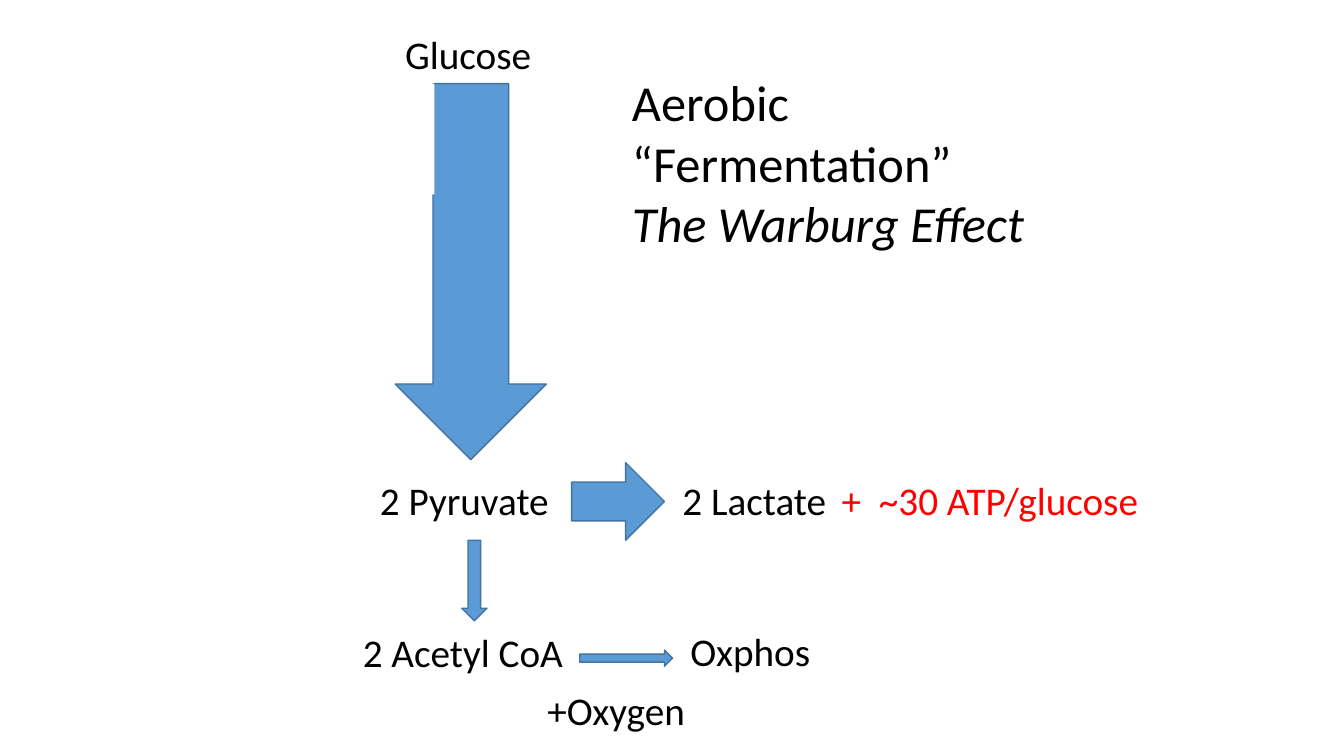
"""Build a slide on aerobic fermentation (the Warburg effect)."""
from pptx import Presentation
from pptx.dml.color import RGBColor
from pptx.enum.shapes import MSO_SHAPE
from pptx.enum.text import MSO_AUTO_SIZE
from pptx.util import Inches, Pt

DOWN, RIGHT, RECT = MSO_SHAPE.DOWN_ARROW, MSO_SHAPE.RIGHT_ARROW, MSO_SHAPE.RECTANGLE
FIT = MSO_AUTO_SIZE.SHAPE_TO_FIT_TEXT
COLORS = {"arrow": "5B9BD5", "outline": "43739E", "text": "000000",
          "energy": "FF0000", "mask": "FFFFFF"}


def rgb(name):
    return RGBColor.from_string(COLORS[name])


prs = Presentation()
prs.slide_width, prs.slide_height = Inches(13.33), Inches(7.5)
s = prs.slides.add_slide(prs.slide_layouts[6])

arrows = [
    (DOWN, 3.92, 0.83, 1.5, 3.73),
    (RIGHT, 5.75, 6.45, 0.92, 0.16),
    (DOWN, 4.58, 5.36, 0.25, 0.8),
    (RIGHT, 5.67, 4.59, 0.92, 0.77),
]
for kind, *box in arrows:
    sp = s.shapes.add_shape(kind, *map(Inches, box))
    sp.shadow.inherit = False
    sp.fill.solid()
    sp.fill.fore_color.rgb = rgb("arrow")
    sp.line.color.rgb = rgb("outline")
    sp.line.width = Pt(1)

labels = [
    ("Glucose", 3.92, 0.25, 2.75, 0.57, 28, "text"),
    ("2 Pyruvate", 3.67, 4.68, 2.75, 0.57, 28, "text"),
    ("2 Lactate", 6.67, 4.68, 2.75, 0.57, 28, "text"),
    ("2 Acetyl CoA", 3.5, 6.18, 2.75, 0.57, 28, "text"),
    ("Oxphos", 6.75, 6.17, 2.75, 0.57, 28, "text"),
    ("Aerobic\n“Fermentation”\nThe Warburg Effect", 6.17, 0.66, 4.33, 1.92, 36, "text"),
    ("+  ~30 ATP/glucose", 8.25, 4.68, 3.71, 0.57, 28, "energy"),
    ("+Oxygen", 5.33, 6.76, 2.75, 0.57, 28, "text"),
]
for text, x, y, w, h, size, color in labels:
    tf = s.shapes.add_textbox(Inches(x), Inches(y), Inches(w), Inches(h)).text_frame
    tf.word_wrap = True
    tf.auto_size = FIT
    tf.text = text
    for p in tf.paragraphs:
        for r in p.runs:
            r.font.name = "Calibri"
            r.font.size = Pt(size)
            r.font.color.rgb = rgb(color)
            if r.text == "The Warburg Effect":
                r.font.italic = True

mask = s.shapes.add_shape(RECT, Inches(1.68), Inches(0.83), Inches(2.63), Inches(1.1))
mask.shadow.inherit = False
mask.fill.solid()
mask.fill.fore_color.rgb = rgb("mask")
mask.line.fill.background()

prs.save("out.pptx")
